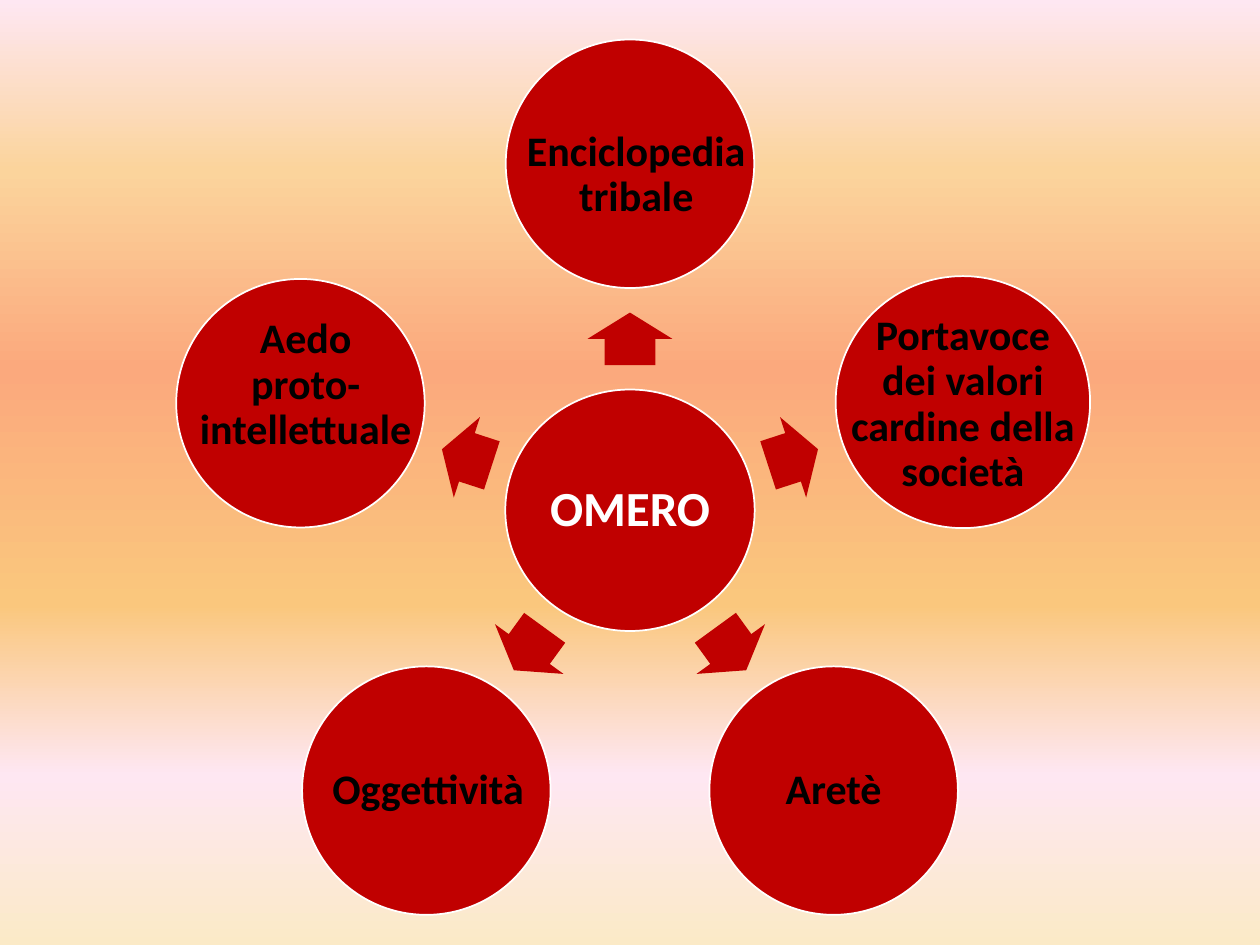
from dataclasses import dataclass
from math import cos, radians, sin

from lxml import etree
from pptx import Presentation
from pptx.dml.color import RGBColor
from pptx.enum.shapes import MSO_SHAPE
from pptx.enum.text import MSO_ANCHOR, PP_ALIGN
from pptx.oxml.ns import qn
from pptx.util import Pt

OVAL = MSO_SHAPE.OVAL
RIGHT_ARROW = MSO_SHAPE.RIGHT_ARROW
MIDDLE = MSO_ANCHOR.MIDDLE
CENTER = PP_ALIGN.CENTER

COLORS = {
    "red": "C00000",
    "white": "FFFFFF",
    "black": "000000",
    "cream": "FBEAC7",
    "pink": "FEE7F2",
    "gold": "FAC77D",
    "coral": "FBA97D",
    "sand": "FBD49C",
}
BACKGROUND_STOPS = [
    (0, "cream"), (18, "pink"), (36, "gold"),
    (61, "coral"), (82, "sand"), (100, "pink"),
]
HUB_X, HUB_Y = 360, 291.6
NODE_RADIUS = 198
ARROW_RADIUS = 98
ARROW_LENGTH, ARROW_WIDTH = 30, 48.4


@dataclass
class Node:
    text: str
    angle: float
    label_width: float
    label_dx: float = 0
    label_dy: float = 0
    width: float = 142
    height: float = 142
    radius: float = NODE_RADIUS


NODES = [
    Node("Enciclopedia tribale", 270, 134, 3.6, 6.5),
    Node("Portavoce dei valori cardine della società", 342, 132, 0, 1.5,
         145.4, 144, 200),
    Node("Aretè", 54, 100),
    Node("Oggettività", 126, 122, 1),
    Node("Aedo\vproto-intellettuale", 198, 127.5, 3, -10),
]


def color(name: str) -> RGBColor:
    return RGBColor.from_string(COLORS[name])


def on_ring(angle: float, radius: float) -> tuple[float, float]:
    turn = radians(angle)
    return HUB_X + radius * cos(turn), HUB_Y + radius * sin(turn)


def frame(x: float, y: float, width: float, height: float) -> tuple:
    return Pt(x - width / 2), Pt(y - height / 2), Pt(width), Pt(height)


def paint_background(page) -> None:
    fill = page.background.fill
    fill.gradient()
    gradient = page.background._cSld.find(".//" + qn("a:gradFill"))
    stops = gradient.find(qn("a:gsLst"))
    for stop in list(stops):
        stops.remove(stop)
    for position, name in BACKGROUND_STOPS:
        stop = etree.SubElement(stops, qn("a:gs"), pos=str(position * 1000))
        etree.SubElement(stop, qn("a:srgbClr"), val=COLORS[name])
    gradient.find(qn("a:lin")).set("ang", str(270 * 60000))


def add_circle(page, x: float, y: float, width: float, height: float) -> None:
    circle = page.shapes.add_shape(OVAL, *frame(x, y, width, height))
    circle.shadow.inherit = False
    circle.fill.solid()
    circle.fill.fore_color.rgb = color("red")
    circle.line.color.rgb = color("white")
    circle.line.width = Pt(1)


def add_arrow(page, angle: float) -> None:
    x, y = on_ring(angle, ARROW_RADIUS)
    arrow = page.shapes.add_shape(
        RIGHT_ARROW, *frame(x, y, ARROW_LENGTH, ARROW_WIDTH))
    arrow.shadow.inherit = False
    arrow.adjustments[0] = 0.6
    arrow.adjustments[1] = 0.5
    arrow.rotation = angle
    arrow.fill.solid()
    arrow.fill.fore_color.rgb = color("red")
    arrow.line.fill.background()


def add_label(page, text: str, x: float, y: float, width: float, *,
              height: float = 100, size: float = 24,
              ink: str = "black", inset: float = 1.5) -> None:
    box = page.shapes.add_textbox(*frame(x, y, width, height))
    body = box.text_frame
    body.word_wrap = True
    body.vertical_anchor = MIDDLE
    body.margin_left = body.margin_right = Pt(inset)
    body.margin_top = body.margin_bottom = Pt(inset)
    para = body.paragraphs[0]
    para.text = text
    para.alignment = CENTER
    para.line_spacing = 0.9
    for span in para.runs:
        span.font.name = "Calibri"
        span.font.size = Pt(size)
        span.font.bold = True
        span.font.color.rgb = color(ink)


def add_node(page, node: Node) -> None:
    x, y = on_ring(node.angle, node.radius)
    add_arrow(page, node.angle)
    add_circle(page, x, y, node.width, node.height)
    add_label(page, node.text, x + node.label_dx, y + node.label_dy,
              node.label_width)


def main() -> None:
    deck = Presentation()
    deck.slide_width, deck.slide_height = Pt(720), Pt(540)
    page = deck.slides.add_slide(deck.slide_layouts[6])
    paint_background(page)
    add_circle(page, HUB_X, HUB_Y, 142.5, 138)
    add_label(page, "OMERO", HUB_X, HUB_Y, 101, height=98, size=28,
              ink="white", inset=2)
    for node in NODES:
        add_node(page, node)
    deck.save("out.pptx")


if __name__ == "__main__":
    main()
